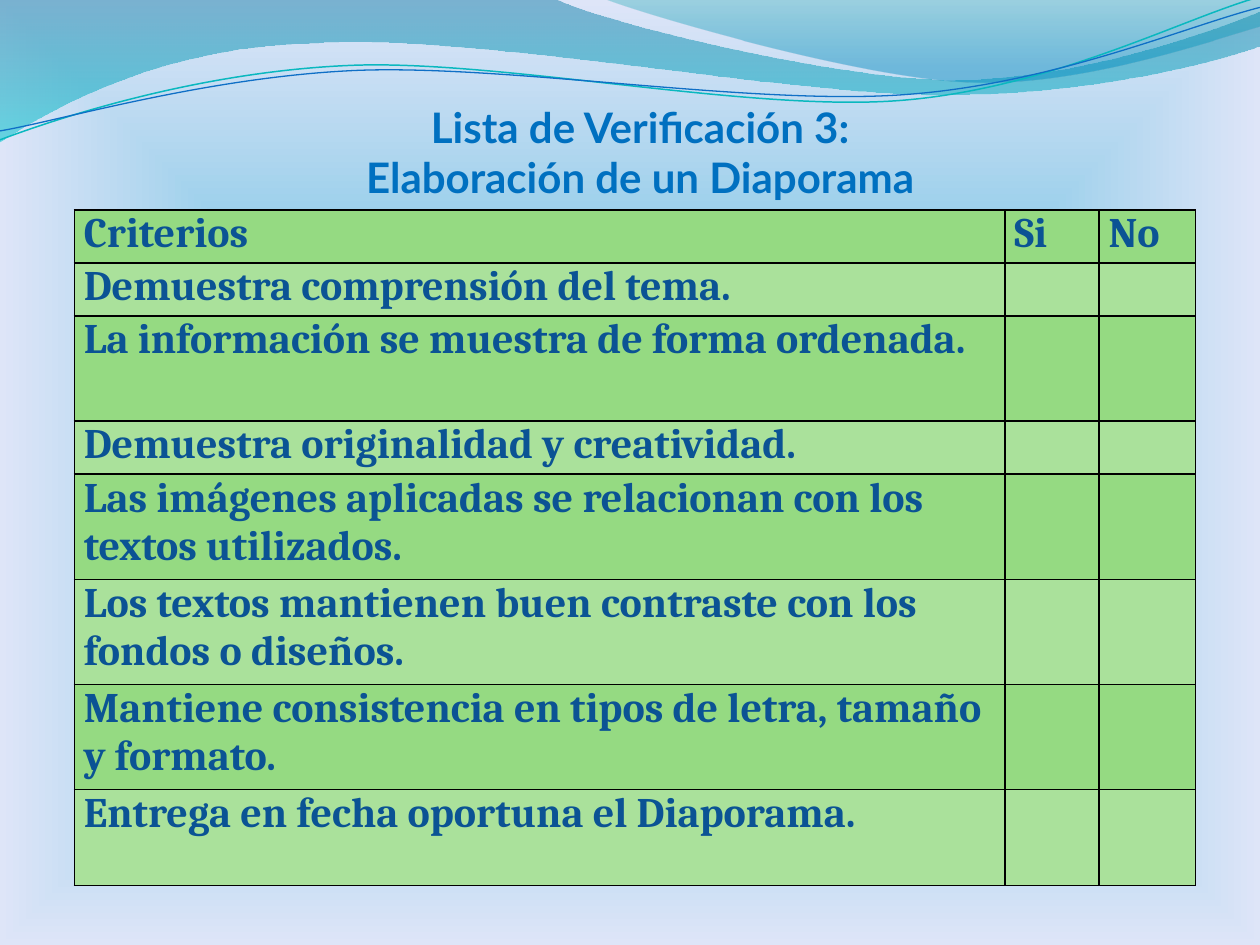
from lxml import etree
from pptx import Presentation
from pptx.dml.color import RGBColor
from pptx.enum.text import MSO_ANCHOR as Anchor, MSO_AUTO_SIZE as AutoSize, PP_ALIGN as Align
from pptx.oxml import parse_xml
from pptx.oxml.ns import qn
from pptx.util import Cm, Pt

NS = 'xmlns:a="http://schemas.openxmlformats.org/drawingml/2006/main"'
SKY, SKY_MID, SKY_PALE = (RGBColor.from_string(c) for c in ("07A1CD", "73C3E3", "DEE5F8"))
DEEP_BLUE, TEAL = RGBColor(0x00, 0x74, 0xA1), RGBColor(0x00, 0xC6, 0xCF)
SEA_GREEN, SEA_BLUE = RGBColor(0x00, 0xA1, 0xA9), RGBColor(0x00, 0x8B, 0xBF)
LINE_TEAL, LINE_BLUE = RGBColor(0x0A, 0xB8, 0xBF), RGBColor(0x0F, 0x6F, 0xC6)
TITLE_BLUE, TEXT_BLUE = RGBColor(0x00, 0x70, 0xC0), RGBColor(0x0B, 0x53, 0x94)
GREEN, GREEN_PALE = RGBColor(0x95, 0xDA, 0x82), RGBColor(0xAA, 0xE1, 0x9B)
BLACK = RGBColor(0, 0, 0)

TITLE_FONT = {"name": "Lato", "size": Pt(24), "bold": True}
TABLE_FONT = {"name": "Cambria", "size": Pt(24), "bold": True}
CELL_FORMAT = {"margin_left": Cm(0.19), "margin_right": Cm(0.19),
               "margin_top": 0, "margin_bottom": 0}

WAVES = [
    ([[(0, 0)], [(11.18, -0.03)],
      [(12.09, 0.43), (16.87, 1.6), (19.25, 1.6)],
      [(21.67, 1.6), (24.33, 0.66), (25.4, 0.23)], [(25.43, 0.91)],
      [(24.97, 1.12), (22.1, 1.93), (18.95, 1.91)],
      [(15.8, 1.91), (9.7, 0.71), (6.53, 0.86)],
      [(3.28, 0.91), (1.17, 2.11), (-0.03, 2.87)]],
     [(0, DEEP_BLUE, 45), (100, TEAL, 55)]),
    ([[(12.17, -0.03)], [(12.93, 0.28), (17.32, 1.57), (19.53, 1.65)],
      [(21.74, 1.75), (24.41, 0.81), (25.4, 0.53)], [(25.4, 0)]],
     [(0, SEA_GREEN, 30), (80, SEA_BLUE, 45)]),
]
CREST_LINES = [
    ([[(0, 2.82)], [(1.22, 2.36), (4.01, 1.45), (7.04, 1.32)],
      [(10.03, 1.19), (15.06, 2.26), (18.11, 2.03)],
      [(21.16, 1.8), (23.83, 0.38), (25.35, -0.05)]], LINE_TEAL, 0.85),
    ([[(0, 2.64)], [(1.19, 2.44), (4.17, 1.55), (7.19, 1.42)],
      [(10.24, 1.3), (15.16, 2.13), (18.21, 1.91)],
      [(21.23, 1.7), (23.9, 0.53), (25.4, 0.15)]], LINE_BLUE, 0.75),
]
TITLE_LINES = ["Lista de Verificación 3:", "Elaboración de un Diaporama"]
HEADINGS = ["Criterios", "Si", "No"]
ONE_LINE, TWO_LINES, LAST_LINE = 1.07, 2.12, 1.93
CRITERIA = [
    ("Demuestra comprensión del tema.", ONE_LINE),
    ("La información se muestra de forma ordenada.", TWO_LINES),
    ("Demuestra originalidad y creatividad.", ONE_LINE),
    ("Las imágenes aplicadas se relacionan con los textos utilizados.", TWO_LINES),
    ("Los textos mantienen buen contraste con los fondos o diseños.", TWO_LINES),
    ("Mantiene consistencia en tipos de letra, tamaño y formato.", TWO_LINES),
    ("Entrega en fecha oportuna el Diaporama.", LAST_LINE),
]
COLUMN_SHARES = [0.83, 0.084, 0.086]


def apply_format(target, values):
    for key, value in values.items():
        setattr(target, key, value)


def gradient(stops, direction):
    marks = "".join(
        f'<a:gs pos="{pos * 1000}"><a:srgbClr val="{color}">'
        f'<a:alpha val="{opacity * 1000}"/></a:srgbClr></a:gs>'
        for pos, color, opacity in stops)
    return parse_xml(f'<a:gradFill {NS} rotWithShape="1"><a:gsLst>{marks}</a:gsLst>'
                     f'{direction}</a:gradFill>')


def set_gradient(fill, owner, stops, direction):
    fill.gradient()
    old = owner.find(".//" + qn("a:gradFill"))
    old.getparent().replace(old, gradient(stops, direction))


def add_outline(slide, left, top, outline, closed):
    segments = [[(Cm(left + x), Cm(top + y)) for x, y in segment] for segment in outline]
    ends = [segment[-1] for segment in segments]
    builder = slide.shapes.build_freeform(*ends[0], scale=1.0)
    builder.add_line_segments(ends[1:], close=closed)
    shape = builder.convert_to_shape()
    shape.shadow.inherit = False
    straight_lines = list(shape.element.spPr.iter(qn("a:lnTo")))
    for line, segment in zip(straight_lines, segments[1:]):
        if len(segment) == 3:
            points = "".join(f'<a:pt x="{x - shape.left}" y="{y - shape.top}"/>'
                             for x, y in segment)
            curve = parse_xml(f'<a:cubicBezTo {NS}>{points}</a:cubicBezTo>')
            line.getparent().replace(line, curve)
    return shape


def add_waves(slide, left, top):
    for outline, stops in WAVES:
        wave = add_outline(slide, left, top, outline, True)
        set_gradient(wave.fill, wave.element.spPr, stops, '<a:lin ang="5400000" scaled="0"/>')
        wave.line.fill.background()
    for outline, color, width in CREST_LINES:
        crest = add_outline(slide, left, top, outline, False)
        crest.fill.background()
        crest.line.color.rgb = color
        crest.line.width = Pt(width)


def add_background(slide):
    stops = [(0, SKY, 100), (26, SKY_MID, 100), (100, SKY_PALE, 100)]
    center = '<a:path path="shape"><a:fillToRect l="50000" t="50000" r="50000" b="50000"/></a:path>'
    set_gradient(slide.background.fill, slide.element, stops, center)


def write(paragraph, text, font, color):
    run = paragraph.add_run()
    run.text = text
    apply_format(run.font, font)
    run.font.color.rgb = color


def add_title(slide, left, top, width, height):
    title = slide.shapes.title
    apply_format(title, {"left": Cm(left), "top": Cm(top),
                         "width": Cm(width), "height": Cm(height)})
    frame = title.text_frame
    apply_format(frame, {"word_wrap": True, "auto_size": AutoSize.SHAPE_TO_FIT_TEXT,
                         "vertical_anchor": Anchor.TOP})
    for index, line in enumerate(TITLE_LINES):
        paragraph = frame.add_paragraph() if index else frame.paragraphs[0]
        paragraph.alignment = Align.CENTER
        write(paragraph, line, TITLE_FONT, TITLE_BLUE)


def format_cell(cell, text, alignment, shade):
    apply_format(cell, CELL_FORMAT)
    cell.fill.solid()
    cell.fill.fore_color.rgb = shade
    if text:
        paragraph = cell.text_frame.paragraphs[0]
        apply_format(paragraph, {"alignment": alignment, "space_before": Pt(1),
                                 "space_after": Pt(1)})
        write(paragraph, text, TABLE_FONT, TEXT_BLUE)
    properties = cell._tc.get_or_add_tcPr()
    for position, side in enumerate(("lnL", "lnR", "lnT", "lnB")):
        border = etree.fromstring(
            f'<a:{side} {NS} w="{Pt(1)}"><a:solidFill><a:srgbClr val="{BLACK}"/>'
            f'</a:solidFill></a:{side}>')
        properties.insert(position, border)


def add_checklist(slide, left, top, width):
    rows = [(HEADINGS, ONE_LINE)] + [((text, "", ""), size) for text, size in CRITERIA]
    height = sum(size for _, size in rows)
    table = slide.shapes.add_table(len(rows), len(HEADINGS), Cm(left), Cm(top),
                                   Cm(width), Cm(height)).table
    for column, share in zip(table.columns, COLUMN_SHARES):
        column.width = Cm(width * share)
    for index, (texts, size) in enumerate(rows):
        table.rows[index].height = Cm(size)
        shade = GREEN_PALE if index % 2 else GREEN
        alignment = Align.LEFT if index else Align.JUSTIFY
        for cell, text in zip(table.rows[index].cells, texts):
            format_cell(cell, text, alignment, shade)


def main():
    deck = Presentation()
    deck.slide_width, deck.slide_height = Cm(25.4), Cm(19.05)
    slide = deck.slides.add_slide(deck.slide_layouts[5])
    add_background(slide)
    add_waves(slide, 0, 0)
    add_title(slide, 4.7, 1.92, 16.41, 2.31)
    add_checklist(slide, 1.5, 4.23, 22.6)
    deck.save("out.pptx")


if __name__ == "__main__":
    main()
